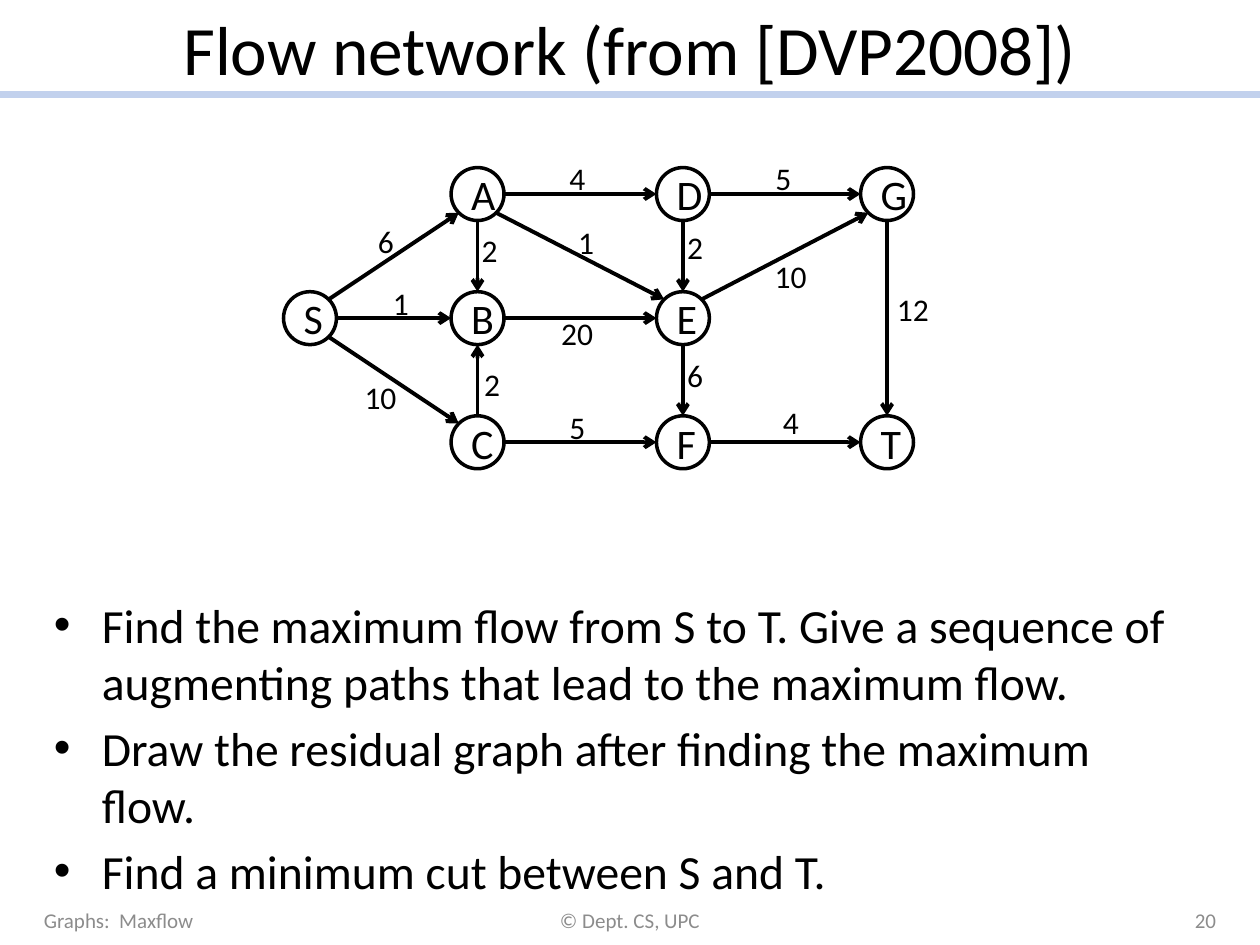
from pptx import Presentation
from pptx.dml.color import RGBColor as Rgb
from pptx.enum.shapes import MSO_CONNECTOR as Wire, MSO_SHAPE as Form
from pptx.enum.text import MSO_ANCHOR as Anchor, PP_ALIGN as Align
from pptx.oxml.ns import qn
from pptx.util import Inches as In, Pt
from lxml.etree import SubElement as Sub

HUES = {"ink": "000000", "rule": "C2D1ED", "foot": "8C8C8C", "page": "FFFFFF"}
FONT = "Calibri"
WIDE, HIGH = 10, 7.5
NODE = 0.42
COLS = (0, 1.33, 2.96, 4.58)
ROWS = (0, 0.985, 1.97)
NODES = {
    "S": (0, 1), "A": (1, 0), "B": (1, 1), "C": (1, 2), "D": (2, 0),
    "E": (2, 1), "F": (2, 2), "G": (3, 0), "T": (3, 2),
}
EDGES = [
    ("SA", 6, -0.06, -0.12), ("SB", 1, 0.06, -0.12), ("SC", 10, -0.1, 0.13),
    ("AB", 2, 0.1, -0.05), ("CB", 2, 0.12, 0.03), ("BE", 20, -0.02, 0.12),
    ("CF", 5, -0.02, -0.12), ("EF", 6, 0.1, -0.04), ("GT", 12, 0.21, -0.07),
    ("FT", 4, 0.05, -0.16), ("AD", 4, -0.02, -0.13), ("AE", 1, 0.05, -0.11),
    ("DG", 5, -0.01, -0.13), ("EG", 10, 0.05, 0.16), ("DE", 2, 0.1, -0.07),
]
TASKS = [
    "Find the maximum flow from S to T. Give a sequence of augmenting paths "
    "that lead to the maximum flow.",
    "Draw the residual graph after finding the maximum flow.",
    "Find a minimum cut between S and T.",
]


def style(frame, size, hue="ink", align=Align.LEFT, anchor=Anchor.MIDDLE):
    """Format all text in a frame."""
    frame.vertical_anchor = anchor
    for para in frame.paragraphs:
        para.alignment = align
        for run in para.runs:
            run.font.size, run.font.name = Pt(size), FONT
            run.font.color.rgb = Rgb.from_string(HUES[hue])


def write(slide, box, text, size, wrap=True, **look):
    """Add a text box and return its frame."""
    frame = slide.shapes.add_textbox(*map(In, box)).text_frame
    frame.word_wrap = wrap
    frame.text = text
    style(frame, size, **look)
    return frame


def draw(slide, start, end, hue, width, arrow=False):
    """Add a straight line, with an arrowhead at its end if asked."""
    line = slide.shapes.add_connector(Wire.STRAIGHT, *map(In, (*start, *end)))
    line.line.color.rgb = Rgb.from_string(HUES[hue])
    line.line.width = Pt(width)
    if arrow:
        Sub(line.line._get_or_add_ln(), qn("a:tailEnd"), type="arrow")
    Sub(line._element.spPr, qn("a:effectLst"))


def head(slide, box):
    """Place the title and the rule along its lower edge."""
    low = box[1] + box[3]
    draw(slide, (0, low), (WIDE, low), "rule", 4)
    write(slide, box, "Flow network (from [DVP2008])", 39.6, align=Align.CENTER)


def tasks(slide, box):
    """Place the bulleted exercises."""
    frame = write(slide, box, "\n".join(TASKS), 27.2, anchor=Anchor.TOP)
    for para in frame.paragraphs:
        para.space_before = Pt(5)
        props = para._p.get_or_add_pPr()
        props.set("marL", str(In(0.38)))
        props.set("indent", str(In(-0.38)))
        Sub(props, qn("a:buFont"), typeface="Arial")
        Sub(props, qn("a:buChar"), char="•")


def foot(slide, box):
    """Place the three footer fields across a band."""
    left, top, width, high = box
    side, mid = 2.33, 3.17
    fields = [
        ("Graphs:  Maxflow", left, side, Align.LEFT),
        ("© Dept. CS, UPC", left + (width - mid) / 2, mid, Align.CENTER),
        ("20", left + width - side, side, Align.RIGHT),
    ]
    for text, at, span, align in fields:
        write(slide, (at, top, span, high), text, 12, hue="foot", align=align)


def node(slide, name, mid):
    """Place one named circle around its centre."""
    at = [In(pos - NODE / 2) for pos in mid]
    ring = slide.shapes.add_shape(Form.OVAL, *at, In(NODE), In(NODE))
    ring.shadow.inherit = False
    ring.fill.background()
    ring.line.color.rgb = Rgb.from_string(HUES["ink"])
    ring.line.width = Pt(2)
    ring.text_frame.text = name
    style(ring.text_frame, 24, align=Align.CENTER)


def edge(slide, start, end):
    """Join two circles at their nearest eighth points."""
    signs = [(b > a) - (b < a) for a, b in zip(start, end)]
    reach = NODE / 2 * (0.71 if all(signs) else 1)
    begin = [pos + sign * reach for pos, sign in zip(start, signs)]
    stop = [pos - sign * reach for pos, sign in zip(end, signs)]
    draw(slide, begin, stop, "ink", 2.25, arrow=True)


def label(slide, start, end, cost, shift):
    """Place a capacity beside the middle of its edge."""
    x, y = [(a + b) / 2 + d for a, b, d in zip(start, end, shift)]
    text = str(cost)
    width, high = 0.2 + 0.13 * len(text), 0.4
    box = (x - width / 2, y - high / 2, width, high)
    write(slide, box, text, 18, wrap=False, anchor=Anchor.TOP)


def graph(slide, left, top):
    """Place the flow network from its top left corner."""
    half = NODE / 2
    mids = {
        name: (left + half + COLS[col], top + half + ROWS[row])
        for name, (col, row) in NODES.items()
    }
    for name, mid in mids.items():
        node(slide, name, mid)
    for (a, b), cost, *shift in EDGES:
        edge(slide, mids[a], mids[b])
        label(slide, mids[a], mids[b], cost, shift)


def main():
    """Build and save the slide."""
    deck = Presentation()
    deck.slide_width, deck.slide_height = In(WIDE), In(HIGH)
    slide = deck.slides.add_slide(deck.slide_layouts[6])
    slide.background.fill.solid()
    slide.background.fill.fore_color.rgb = Rgb.from_string(HUES["page"])
    head(slide, (0.5, 0, 9, 0.75))
    tasks(slide, (0.33, 4.68, 9.25, 2.15))
    foot(slide, (0.25, 7.1, 9.5, 0.4))
    graph(slide, 2.25, 1.33)
    deck.save("out.pptx")


if __name__ == "__main__":
    main()
